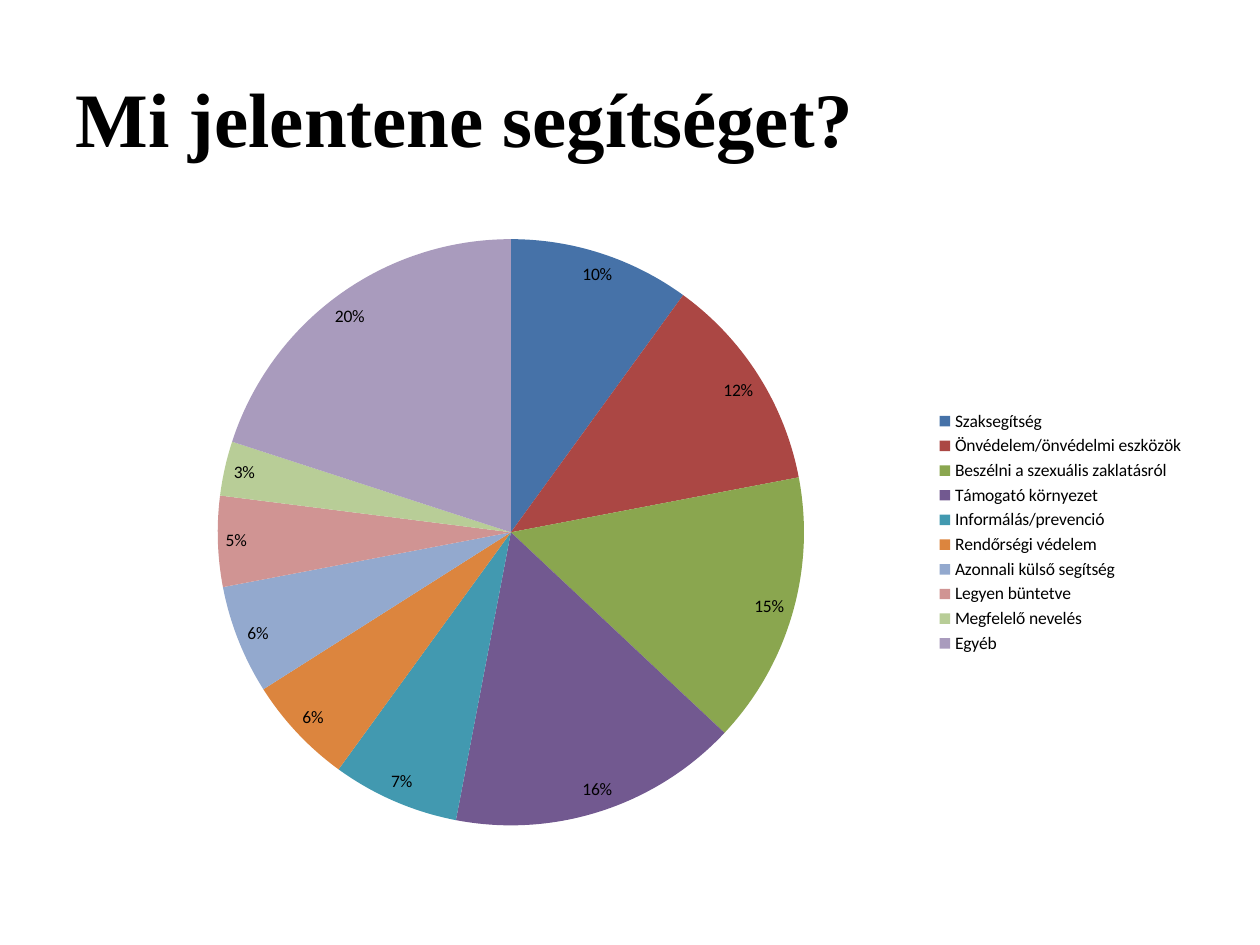
from lxml import etree
from pptx import Presentation, util as u
from pptx.chart.data import CategoryChartData
from pptx.dml.color import RGBColor
from pptx.enum import chart as ch, text
from pptx.oxml import ns

COLORS = {"ink": "000000"}
ANSWERS = {
    "Szaksegítség": (10, "4672A8"),
    "Önvédelem/önvédelmi eszközök": (12, "AB4744"),
    "Beszélni a szexuális zaklatásról": (15, "8AA64F"),
    "Támogató környezet": (16, "725990"),
    "Informálás/prevenció": (7, "4299B0"),
    "Rendőrségi védelem": (6, "DC853E"),
    "Azonnali külső segítség": (6, "93A9CE"),
    "Legyen büntetve": (5, "D09493"),
    "Megfelelő nevelés": (3, "B8CD97"),
    "Egyéb": (20, "A99BBD"),
}
PIE_AREA = {"x": 0.13, "y": 0.03, "w": 0.53, "h": 0.94}


def apply_format(target, values):
    """Set every attribute named in values on target."""
    for name, value in values.items():
        setattr(target, name, value)


def format_font(font, **values):
    """Apply font values in the ink colour."""
    apply_format(font, values)
    font.color.rgb = RGBColor.from_string(COLORS["ink"])


def place_plot(chart, area):
    """Fix the inner plot area to fractions of the chart box."""
    plot_area = chart.plots[0]._element.getparent()
    layout = plot_area.find(ns.qn("c:layout"))
    if layout is None:
        layout = etree.Element(ns.qn("c:layout"))
        plot_area.insert(0, layout)
    manual = etree.SubElement(layout, ns.qn("c:manualLayout"))
    settings = {"layoutTarget": "inner", "xMode": "edge", "yMode": "edge", **area}
    for tag, value in settings.items():
        etree.SubElement(manual, ns.qn(f"c:{tag}")).set("val", str(value))


def add_heading(slide, box):
    """Place the question in the title placeholder."""
    heading = slide.shapes.title
    apply_format(heading, dict(zip(("left", "top", "width", "height"), box)))
    frame = heading.text_frame
    frame.text = "Mi jelentene segítséget?"
    apply_format(frame, {"vertical_anchor": text.MSO_ANCHOR.MIDDLE, "word_wrap": True})
    question = frame.paragraphs[0]
    question.alignment = text.PP_ALIGN.LEFT
    format_font(question.runs[0].font, name="Times New Roman", size=u.Pt(44), bold=True)


def add_answers(slide, box):
    """Draw the share of each answer as a pie with a legend."""
    shares = CategoryChartData()
    shares.categories = list(ANSWERS)
    shares.add_series("Series 1", [value for value, _ in ANSWERS.values()])
    pie = slide.shapes.add_chart(ch.XL_CHART_TYPE.PIE, *box, shares).chart
    apply_format(pie, {"has_title": False, "has_legend": True})
    format_font(pie.font, name="Calibri", size=u.Pt(10))
    apply_format(pie.legend, {"position": ch.XL_LEGEND_POSITION.RIGHT,
                              "include_in_layout": False})
    plot = pie.plots[0]
    apply_format(plot, {"vary_by_categories": True, "has_data_labels": True})
    apply_format(plot.data_labels, {
        "show_percentage": True, "show_value": False,
        "number_format": "0%", "number_format_is_linked": False,
        "position": ch.XL_LABEL_POSITION.BEST_FIT,
    })
    for index, (_, color) in enumerate(ANSWERS.values()):
        fill = plot.series[0].points[index].format.fill
        fill.solid()
        fill.fore_color.rgb = RGBColor.from_string(color)
    place_plot(pie, PIE_AREA)


def main():
    """Build and save the slide."""
    deck = Presentation()
    apply_format(deck, {"slide_width": u.Inches(10), "slide_height": u.Inches(7.5)})
    slide = deck.slides.add_slide(deck.slide_layouts.get_by_name("Title Only"))
    add_heading(slide, [u.Inches(n) for n in (0.5, 0.3, 9, 1.25)])
    add_answers(slide, [u.Inches(n) for n in (0.5, 1.75, 9, 4.95)])
    deck.save("out.pptx")


if __name__ == "__main__":
    main()
